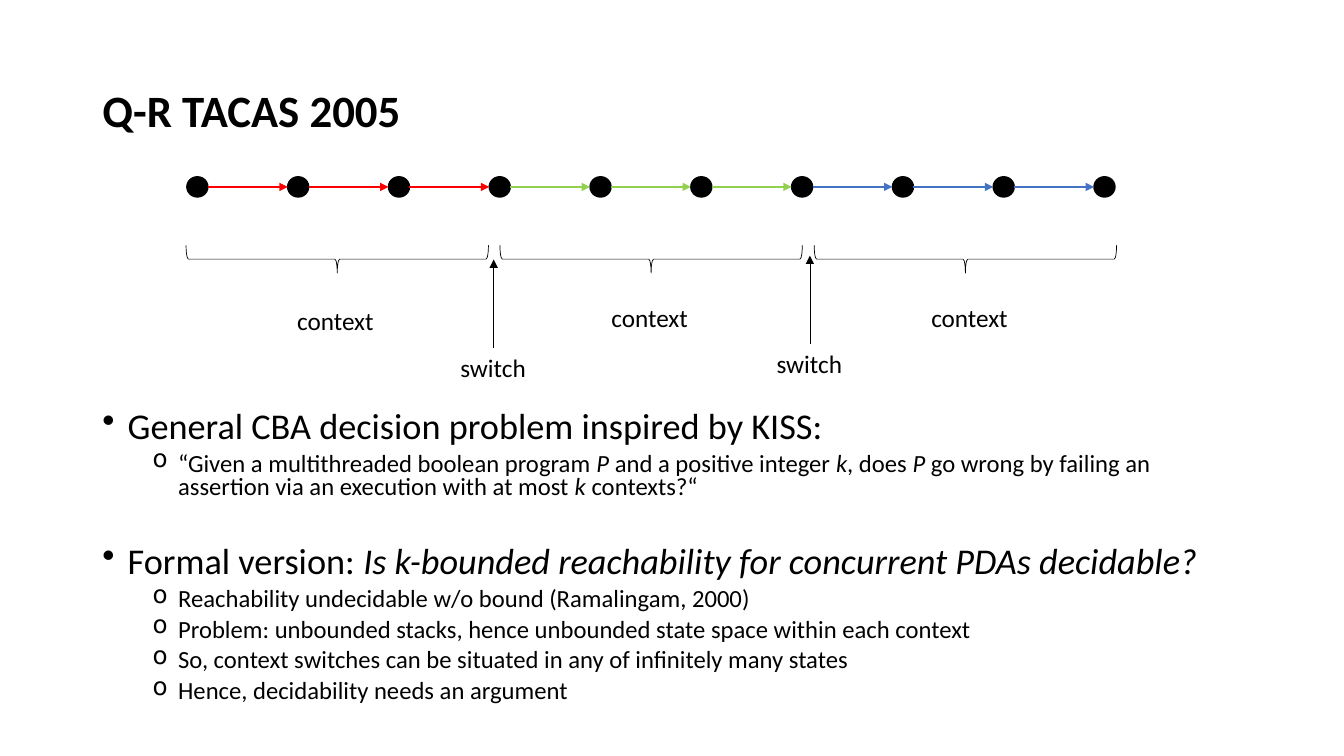
from lxml.etree import SubElement
from pptx import Presentation
from pptx.dml.color import RGBColor
from pptx.enum.shapes import MSO_CONNECTOR as Connector, MSO_SHAPE as Shape
from pptx.enum.text import MSO_ANCHOR as Anchor, MSO_AUTO_SIZE as AutoSize
from pptx.oxml.ns import qn
from pptx.util import Cm, Pt

BLACK = RGBColor(0x00, 0x00, 0x00)
RED = RGBColor(0xFF, 0x00, 0x00)
GREEN = RGBColor(0x92, 0xD0, 0x50)
BLUE = RGBColor(0x44, 0x72, 0xC4)

presentation = Presentation()
presentation.slide_width, presentation.slide_height = Cm(33.87), Cm(19.05)
slide = presentation.slides.add_slide(presentation.slide_layouts[6])
shapes = slide.shapes


def add_run(paragraph, text, size, bold=False, italic=False):
    run = paragraph.add_run()
    run.text = text
    run.font.name, run.font.size = "Calibri", Pt(size)
    run.font.bold, run.font.italic = bold, italic
    run.font.color.rgb = BLACK


def add_arrow(x1, y1, x2, y2, color, width):
    arrow = shapes.add_connector(Connector.STRAIGHT, Cm(x1), Cm(y1), Cm(x2), Cm(y2))
    arrow.line.color.rgb, arrow.line.width = color, Pt(width)
    SubElement(arrow.line._get_or_add_ln(), qn("a:tailEnd"), type="triangle")
    SubElement(arrow._element.spPr, qn("a:effectLst"))
    return arrow


# Title
title = shapes.add_textbox(Cm(2.33), Cm(1.01), Cm(29.21), Cm(3.68))
title.text_frame.word_wrap = True
title.text_frame.vertical_anchor = Anchor.MIDDLE
heading = title.text_frame.paragraphs[0]
heading.line_spacing = 0.9
add_run(heading, "Q-R TACAS 2005", 32, bold=True)

# Bullets: level, space before, runs of (text, italic)
bullets = [
    (0, 10, [("General CBA decision problem inspired by KISS:", False)]),
    (1, 5, [("“Given a multithreaded boolean program ", False), ("P ", True),
            ("and a positive integer ", False), ("k", True), (", does ", False),
            ("P ", True),
            ("go wrong by failing an assertion via an execution with at most ", False),
            ("k ", True), ("contexts?“", False)]),
    (0, 33, [("Formal version: ", False),
             ("Is k-bounded reachability for concurrent PDAs decidable?", True)]),
    (1, 5, [("Reachability undecidable w/o bound (Ramalingam, 2000)", False)]),
    (1, 5, [("Problem: unbounded stacks, hence unbounded state space within each context",
             False)]),
    (1, 5, [("So, context switches can be situated in any of infinitely many states", False)]),
    (1, 5, [("Hence, decidability needs an argument", False)]),
]
LEVELS = [("•", 25.9, 0.64), ("o", 17.6, 1.91)]
body = shapes.add_textbox(Cm(2.33), Cm(10.24), Cm(29.21), Cm(8.1))
body.text_frame.word_wrap = True
for index, (level, space, runs) in enumerate(bullets):
    frame = body.text_frame
    paragraph = frame.add_paragraph() if index else frame.paragraphs[0]
    mark, size, margin = LEVELS[level]
    paragraph.level, paragraph.line_spacing = level, 0.8
    paragraph.space_before = Pt(space)
    properties = paragraph._p.get_or_add_pPr()
    properties.set("marL", str(Cm(margin)))
    properties.set("indent", str(Cm(-0.64)))
    SubElement(properties, qn("a:buChar"), char=mark)
    for text, italic in runs:
        add_run(paragraph, text, size, italic=italic)

# Chain of states
STEP, STATE_LEFT, STATE_WIDTH, STATE_HEIGHT, CHAIN_Y = 2.54, 4.71, 0.53, 0.51, 4.71
for index in range(10):
    state = shapes.add_shape(Shape.OVAL, Cm(STATE_LEFT + index * STEP),
                             Cm(CHAIN_Y - STATE_HEIGHT / 2), Cm(STATE_WIDTH), Cm(STATE_HEIGHT))
    state.shadow.inherit = False
    state.fill.solid()
    state.fill.fore_color.rgb = BLACK
    state.line.color.rgb, state.line.width = BLACK, Pt(1)

# Transitions, three per context
for index in range(9):
    left = STATE_LEFT + index * STEP
    add_arrow(left + STATE_WIDTH, CHAIN_Y, left + STEP, CHAIN_Y,
              [RED, GREEN, BLUE][index // 3], 1.5)

# Braces under the contexts
for left in (8.15, 16.06, 23.98):
    brace = shapes.add_shape(Shape.LEFT_BRACE, Cm(left), Cm(2.72), Cm(0.7), Cm(7.62))
    brace.rotation = 270
    brace.shadow.inherit = False
    brace.fill.background()
    brace.line.color.rgb, brace.line.width = BLACK, Pt(0.5)

# Labels, with an arrow up from each switch
labels = [("context", 7.24, 7.57, 2.46), ("context", 15.16, 7.49, 2.46),
          ("context", 23.22, 7.49, 2.46), ("switch", 11.35, 8.76, 2.18),
          ("switch", 19.32, 8.66, 2.18)]
for text, left, top, width in labels:
    label = shapes.add_textbox(Cm(left), Cm(top), Cm(width), Cm(1.03))
    label.text_frame.word_wrap = False
    label.text_frame.auto_size = AutoSize.SHAPE_TO_FIT_TEXT
    add_run(label.text_frame.paragraphs[0], text, 18)
    if text == "switch":
        middle = left + width / 2
        arrow = add_arrow(middle, top, middle, top - 2.22, BLACK, 0.5)
        arrow.begin_connect(label, 0)

presentation.save("out.pptx")
